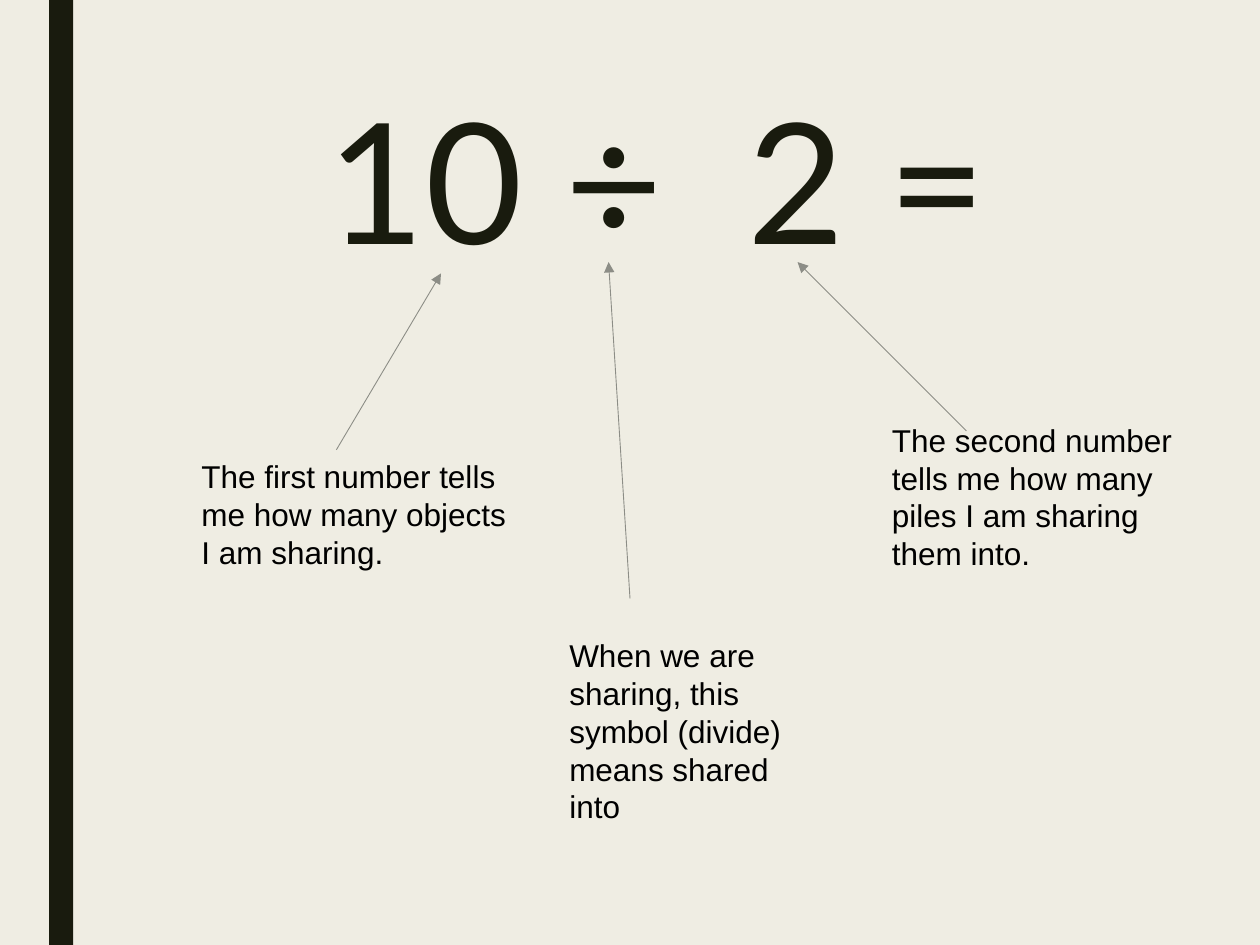
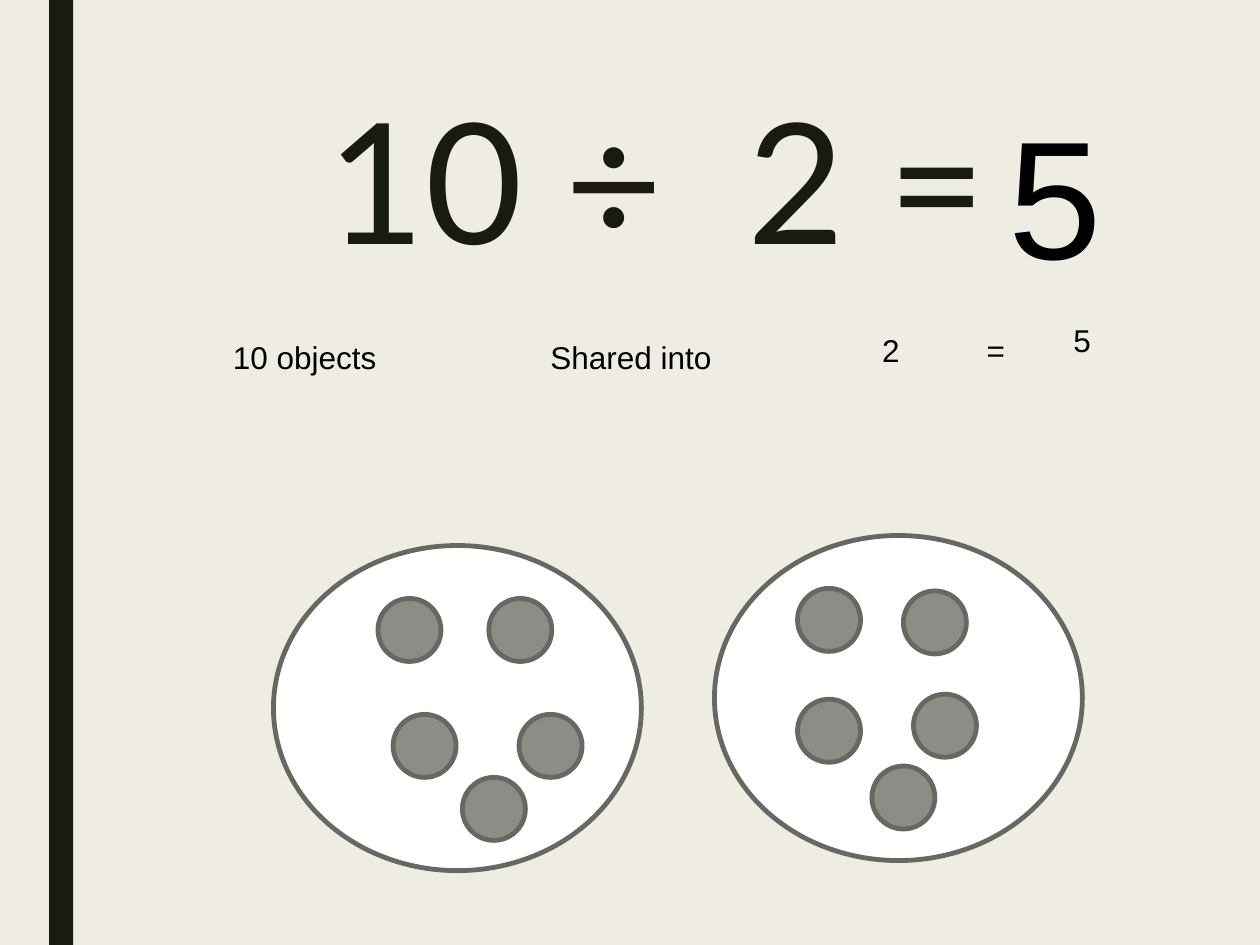
from lxml import etree
from pptx import Presentation
from pptx import util as u
from pptx.dml import color
from pptx.enum import shapes, text
from pptx.oxml import ns

EMU_PER_PX = 9144
SLIDE_WIDTH, SLIDE_HEIGHT = 1000, 750
TITLE_ONLY = 5
COLOURS = {
    "background": "EFEDE3",
    "ink": "191B0E",
    "black": "000000",
    "pile": "FFFFFF",
    "counter": "8C8D86",
    "outline": "686863",
}
TITLE_FRAME = {
    "auto_size": text.MSO_AUTO_SIZE.NONE,
    "vertical_anchor": text.MSO_ANCHOR.TOP,
    "word_wrap": True,
}
TITLE_PARAGRAPH = {"alignment": text.PP_ALIGN.LEFT, "line_spacing": 0.89}
NOTE_FRAME = {
    "word_wrap": True,
    "auto_size": text.MSO_AUTO_SIZE.SHAPE_TO_FIT_TEXT,
    "vertical_anchor": text.MSO_ANCHOR.TOP,
}
PILE_SIZE = (292, 258)
COUNTER_SIZE = (50, 50)
WIDE_SPACE = 2400

EXPLANATIONS = [
    ("The first number tells me how many objects I am sharing.",
     (150, 358, 275, 101), (267, 357), (350, 217)),
    ("The second number tells me how many piles I am sharing them into.",
     (698, 329, 275, 131), (767, 342), (633, 208)),
    ("When we are sharing, this symbol (divide) means shared into",
     (442, 500, 217, 162), (500, 475), (483, 208)),
]
LABELS = [
    ("10 objects", (175, 263, 275, 40)),
    ("Shared into", (427, 263, 217, 40)),
    ("5", (842, 250, 100, 40)),
]
PILES = [
    ((217, 433), [(83, 42), (171, 42), (95, 134), (195, 134), (150, 184)]),
    ((567, 425), [(66, 42), (150, 44), (66, 130), (158, 126), (125, 183)]),
]


def px(*lengths):
    return [u.Emu(length * EMU_PER_PX) for length in lengths]


def rgb(name):
    return color.RGBColor.from_string(COLOURS[name])


def set_values(target, values):
    for name, value in values.items():
        setattr(target, name, value)


def add_run(paragraph, words, size, font, colour):
    run = paragraph.add_run()
    run.text = words
    set_values(run.font, {"size": u.Pt(size), "name": font})
    run.font.color.rgb = rgb(colour)
    return run


def add_filled_shape(slide, kind, box, fill, outline=None):
    shape = slide.shapes.add_shape(kind, *px(*box))
    shape.shadow.inherit = False
    shape.fill.solid()
    shape.fill.fore_color.rgb = rgb(fill)
    if outline:
        shape.line.color.rgb = rgb(outline)
        shape.line.width = u.Pt(2.75)
    else:
        shape.line.fill.background()
    return shape


def add_note(slide, words, box, size=18):
    shape = slide.shapes.add_textbox(*px(*box))
    set_values(shape.text_frame, NOTE_FRAME)
    add_run(shape.text_frame.paragraphs[0], words, size, "Arial", "black")
    return shape


def add_tab_stop(paragraph, position):
    properties = paragraph._p.get_or_add_pPr()
    tabs = etree.SubElement(properties, ns.qn("a:tabLst"))
    etree.SubElement(tabs, ns.qn("a:tab"), pos=str(px(position)[0]), algn="l")


def add_arrow(slide, start, end):
    arrow = slide.shapes.add_connector(
        shapes.MSO_CONNECTOR.STRAIGHT, *px(*start, *end))
    arrow.line.color.rgb = rgb("counter")
    arrow.line.width = u.Pt(0.5)
    properties = arrow.element.spPr
    etree.SubElement(properties.find(ns.qn("a:ln")), ns.qn("a:tailEnd"), type="triangle")
    etree.SubElement(properties, ns.qn("a:effectLst"))


def add_oval(slide, corner, size, fill):
    add_filled_shape(slide, shapes.MSO_SHAPE.OVAL, (*corner, *size), fill, "outline")


def add_pile(slide, corner, offsets):
    add_oval(slide, corner, PILE_SIZE, "pile")
    left, top = corner
    for across, down in offsets:
        add_oval(slide, (left + across, top + down), COUNTER_SIZE, "counter")


def style_master(presentation, slide):
    master = presentation.slide_master
    master.background.fill.solid()
    master.background.fill.fore_color.rgb = rgb("background")
    band = add_filled_shape(
        slide, shapes.MSO_SHAPE.RECTANGLE, (39, 0, 19, SLIDE_HEIGHT), "ink")
    band.element.nvSpPr.cNvPr.set("id", "100")
    master.shapes.element.append(band.element)


def add_sum_slide(presentation):
    slide = presentation.slides.add_slide(presentation.slide_layouts[TITLE_ONLY])
    title = slide.shapes.title
    title.left, title.top, title.width, title.height = px(250, 75, 788, 162)
    set_values(title.text_frame, TITLE_FRAME)
    paragraph = title.text_frame.paragraphs[0]
    set_values(paragraph, TITLE_PARAGRAPH)
    runs = [add_run(paragraph, words, 96, "Lato", "ink")
            for words in ("10 ÷", " ", "2 =")]
    runs[1].font._element.set("spc", str(WIDE_SPACE))
    return slide


def build_explanation(slide):
    for words, box, start, end in EXPLANATIONS:
        add_note(slide, words, box)
        add_arrow(slide, start, end)


def build_sharing(slide):
    for words, box in LABELS:
        add_note(slide, words, box)
    result = add_note(slide, "2\t=", (683, 258, 275, 40))
    result.text_frame.margin_left = px(17)[0]
    add_tab_stop(result.text_frame.paragraphs[0], 83)
    for corner, offsets in PILES:
        add_pile(slide, corner, offsets)
    add_note(slide, "5", (791, 68, 100, 172), 96)


def main():
    presentation = Presentation()
    presentation.slide_width, presentation.slide_height = px(SLIDE_WIDTH, SLIDE_HEIGHT)
    explanation = add_sum_slide(presentation)
    style_master(presentation, explanation)
    build_explanation(explanation)
    build_sharing(add_sum_slide(presentation))
    presentation.save("out.pptx")


if __name__ == "__main__":
    main()
